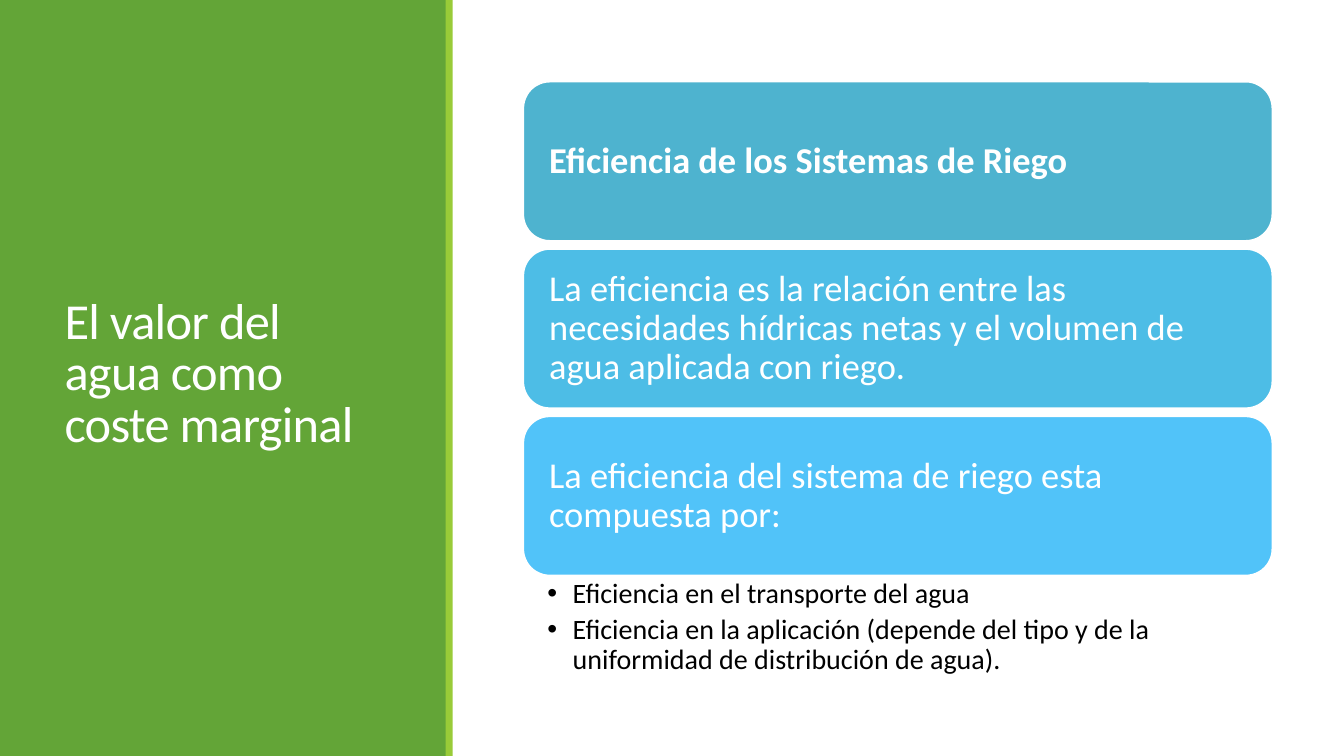
from pptx import Presentation, util as u
from pptx.dml.color import RGBColor
from pptx.enum import shapes, text
from pptx.oxml import parse_xml
from pptx.oxml.ns import nsdecls

TITLE = "El valor del agua como coste marginal"
CARDS = [
    # text, fill, bold
    ("Eficiencia de los Sistemas de Riego", "4EB3CF", True),
    ("La eficiencia es la relación entre las necesidades hídricas netas "
     "y el volumen de agua aplicada con riego.", "4DBDE6", False),
    ("La eficiencia del sistema de riego esta compuesta por:", "51C3F9", False),
]
BULLETS = [
    "Eficiencia en el transporte del agua",
    "Eficiencia en la aplicación (depende del tipo y de la uniformidad "
    "de distribución de agua).",
]
THEME = {
    "font": "Calibri",
    "panel": "63A537", "stripe": "99CB38", "white": "FFFFFF", "black": "000000",
    "title_size": 36, "card_size": 26, "bullet_size": 20,
}
SLIDE_W, SLIDE_H = 13.33, 7.5
CARD_LEFT, CARD_TOP, CARD_W, CARD_H, CARD_PITCH = 5.19, 0.81, 7.43, 1.58, 1.66


def set_attrs(obj, **values):
    for name, value in values.items():
        setattr(obj, name, value)


def inches(*values):
    return [u.Inches(v) for v in values]


def add_block(s, kind, box, fill, line=None):
    sp = s.shapes.add_shape(kind, *inches(*box))
    sp.shadow.inherit = False
    sp.fill.solid()
    sp.fill.fore_color.rgb = RGBColor.from_string(fill)
    if line:
        sp.line.color.rgb = RGBColor.from_string(line)
        sp.line.width = u.Pt(1.25)
    else:
        sp.line.fill.background()
    return sp


def set_frame(tf, anchor, margins):
    left, top, right, bottom = inches(*margins)
    set_attrs(tf, word_wrap=True, auto_size=text.MSO_AUTO_SIZE.NONE,
              vertical_anchor=anchor, margin_left=left, margin_top=top,
              margin_right=right, margin_bottom=bottom)


def write(p, words, size, color, spacing=0.9, bold=False):
    set_attrs(p, alignment=text.PP_ALIGN.LEFT, line_spacing=spacing)
    r = p.add_run()
    r.text = words
    set_attrs(r.font, name=THEME["font"], size=u.Pt(size), bold=bold)
    r.font.color.rgb = RGBColor.from_string(color)
    return r


def add_bullet(p):
    pPr = p._p.get_or_add_pPr()
    pPr.set("marL", str(u.Inches(0.25)))
    pPr.set("indent", str(u.Inches(-0.25)))
    for tag in ('a:buFont {} typeface="Arial"', 'a:buChar {} char="•"'):
        pPr.append(parse_xml(f"<{tag.format(nsdecls('a'))}/>"))


def add_title(s):
    title = s.shapes.title
    left, top, width, height = inches(0.54, 0.57, 3.37, 6.31)
    set_attrs(title, left=left, top=top, width=width, height=height)
    tf = title.text_frame
    set_frame(tf, text.MSO_ANCHOR.MIDDLE, (0.1, 0.05, 0.1, 0.05))
    r = write(tf.paragraphs[0], TITLE, THEME["title_size"], THEME["white"], 0.85)
    r.font._element.set("spc", "-50")
    return title


def add_cards(s):
    for i, (words, fill, bold) in enumerate(CARDS):
        box = (CARD_LEFT, CARD_TOP + i * CARD_PITCH, CARD_W, CARD_H)
        sp = add_block(s, shapes.MSO_SHAPE.ROUNDED_RECTANGLE, box, fill, THEME["white"])
        set_frame(sp.text_frame, text.MSO_ANCHOR.MIDDLE, (0.18, 0.11, 0.18, 0.11))
        write(sp.text_frame.paragraphs[0], words, THEME["card_size"],
              THEME["white"], bold=bold)


def add_bullets(s):
    top = CARD_TOP + (len(CARDS) - 1) * CARD_PITCH + CARD_H
    tf = s.shapes.add_textbox(*inches(CARD_LEFT, top, CARD_W, 1.06)).text_frame
    set_frame(tf, text.MSO_ANCHOR.TOP, (0.24, 0.04, 0.2, 0.04))
    for i, words in enumerate(BULLETS):
        p = tf.add_paragraph() if i else tf.paragraphs[0]
        add_bullet(p)
        p.space_after = u.Pt(4)
        write(p, words, THEME["bullet_size"], THEME["black"])


def main():
    prs = Presentation()
    prs.slide_width, prs.slide_height = inches(SLIDE_W, SLIDE_H)
    s = prs.slides.add_slide(prs.slide_layouts[5])
    title = add_title(s)
    rect = shapes.MSO_SHAPE.RECTANGLE
    panel = add_block(s, rect, (0, 0, 4.43, SLIDE_H), THEME["panel"])
    panel._element.addnext(title._element)  # title sits above the panel
    add_block(s, rect, (4.42, 0, 0.07, SLIDE_H), THEME["stripe"])
    add_cards(s)
    add_bullets(s)
    prs.save("out.pptx")


if __name__ == "__main__":
    main()
